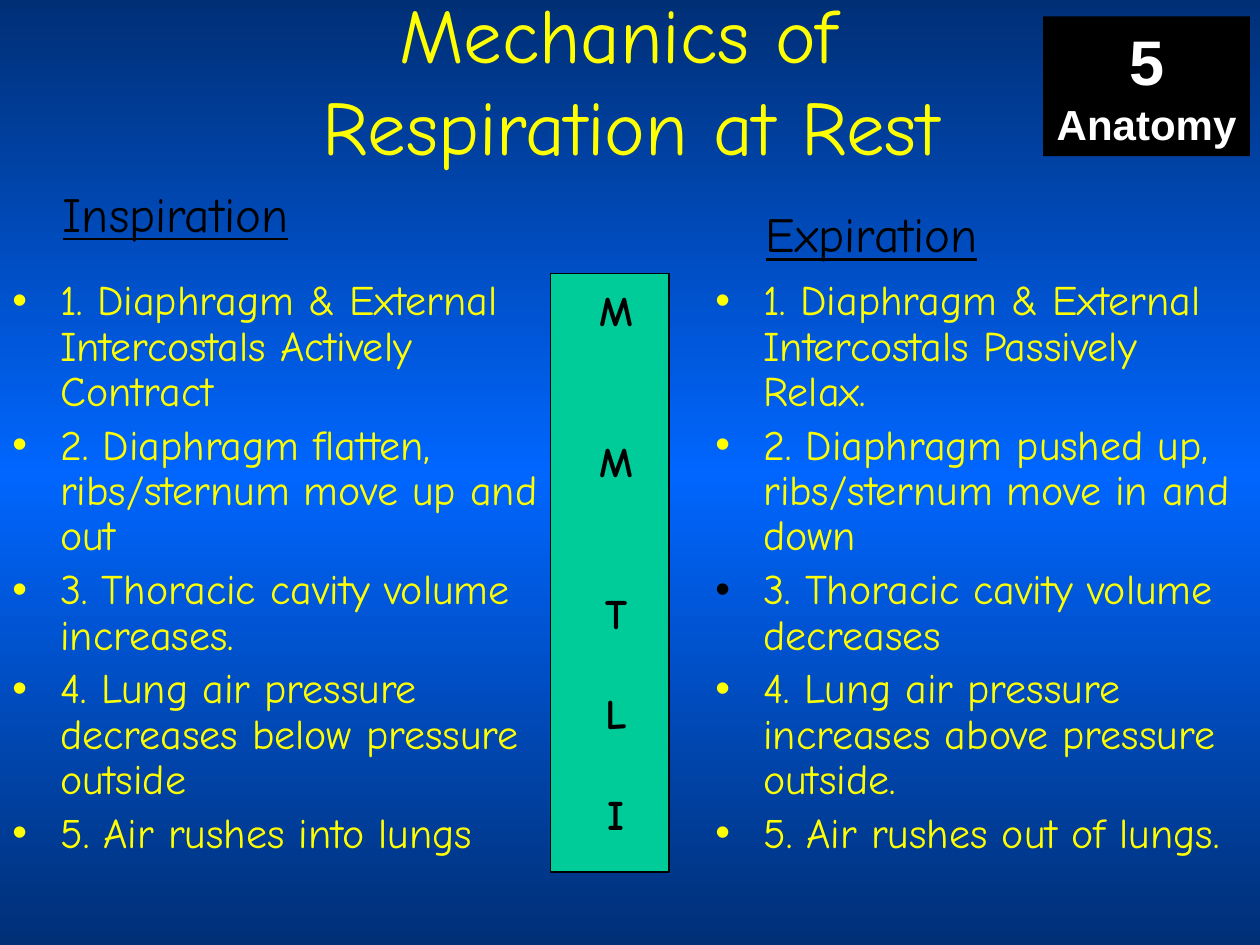
from copy import deepcopy

from lxml.etree import SubElement
from pptx import Presentation
from pptx.dml.color import RGBColor
from pptx.enum.shapes import MSO_SHAPE
from pptx.enum.text import MSO_ANCHOR, PP_ALIGN
from pptx.oxml.ns import qn
from pptx.util import Inches, Pt

WIDTH, HEIGHT = 10, 7.5
YELLOW, BLACK, WHITE, GREEN = "FFFF00", "000000", "FFFFFF", "00CC99"
NAVY, BLUE = "002F76", "0066FF"
HAND, SANS = "Comic Neue", "Arial"
LINE_HEIGHT = 1.2
BODY_SIZE = 24
INDENT = 0.38
BODY_TOP = 2.17

TITLE = "Mechanics of \vRespiration at Rest"
COLUMNS = [
    {
        "heading": "Inspiration", "heading_box": (0.4, 1.41, 2.02, 0.57), "left": 0,
        "steps": [
            ("1. Diaphragm & External Intercostals Actively Contract", YELLOW),
            ("2. Diaphragm flatten, ribs/sternum move up and out", YELLOW),
            ("3. Thoracic cavity volume increases.", YELLOW),
            ("4. Lung air pressure decreases below pressure outside", YELLOW),
            ("5. Air rushes into lungs", YELLOW),
        ],
    },
    {
        "heading": "Expiration", "heading_box": (5.98, 1.57, 1.95, 0.57), "left": 5.58,
        "steps": [
            ("1. Diaphragm & External Intercostals Passively Relax.", YELLOW),
            ("2. Diaphragm pushed up, ribs/sternum move in and down", YELLOW),
            ("3. Thoracic cavity volume decreases", BLACK),
            ("4. Lung air pressure increases above pressure outside.", YELLOW),
            ("5. Air rushes out of lungs.", YELLOW),
        ],
    },
]
# Each letter with the number of lines left free above it
MNEMONIC = [("M", 0), ("M", 2), ("T", 2), ("L", 1), ("I", 1)]
BADGE = [("5", 36), ("Anatomy", 24)]


def color(value):
    """Turn a hex string into a colour."""
    return RGBColor.from_string(value)


def paint_background(slide):
    """Fill the slide with a vertical navy, blue, navy gradient."""
    fill = slide.background.fill
    fill.gradient()
    fill.gradient_angle = 90
    stop_list = slide.element.find(".//" + qn("a:gsLst"))
    stop_list.append(deepcopy(stop_list[0]))
    for stop, position, value in zip(fill.gradient_stops, (0, 0.5, 1), (NAVY, BLUE, NAVY)):
        stop.position = position
        stop.color.rgb = color(value)


def add_text_box(slide, box, wrap=True):
    """Add a text box and return its text frame."""
    frame = slide.shapes.add_textbox(*map(Inches, box)).text_frame
    frame.word_wrap = wrap
    return frame


def add_rectangle(slide, box, fill, line=None):
    """Add a flat rectangle with an optional thin outline."""
    shape = slide.shapes.add_shape(MSO_SHAPE.RECTANGLE, *map(Inches, box))
    shape.shadow.inherit = False
    shape.fill.solid()
    shape.fill.fore_color.rgb = color(fill)
    if line:
        shape.line.color.rgb = color(line)
        shape.line.width = Pt(0.75)
    else:
        shape.line.fill.background()
    return shape


def write(frame, index, text, font_color, layout=None, **font):
    """Write one paragraph with its layout and font values."""
    paragraph = frame.paragraphs[0] if index == 0 else frame.add_paragraph()
    paragraph.text = text
    for name, value in (layout or {}).items():
        setattr(paragraph, name, value)
    # Font values also reach the line break inside a paragraph
    for part in (paragraph.font, *(run.font for run in paragraph.runs)):
        for name, value in font.items():
            setattr(part, name, value)
        part.color.rgb = color(font_color)
    return paragraph


def add_bullet(paragraph, value):
    """Give a paragraph a hanging round bullet."""
    properties = paragraph._p.get_or_add_pPr()
    properties.set("marL", str(Inches(INDENT)))
    properties.set("indent", str(-Inches(INDENT)))
    bullet_color = SubElement(properties, qn("a:buClr"))
    SubElement(bullet_color, qn("a:srgbClr"), val=value)
    SubElement(properties, qn("a:buFont"), typeface=SANS)
    SubElement(properties, qn("a:buChar"), char="\u2022")
    defaults = properties.find(qn("a:defRPr"))
    properties.append(defaults)


def add_column(slide, column):
    """Add an underlined heading and its bulleted steps."""
    heading = add_text_box(slide, column["heading_box"], wrap=False)
    write(heading, 0, column["heading"], BLACK, name=HAND, size=Pt(28), underline=True)
    frame = add_text_box(slide, (column["left"], BODY_TOP, 4.42, 4.5))
    layout = {"line_spacing": 0.9, "space_before": Pt(0.2 * BODY_SIZE)}
    for index, (step, bullet) in enumerate(column["steps"]):
        paragraph = write(frame, index, step, YELLOW, layout, name=HAND, size=Pt(BODY_SIZE))
        add_bullet(paragraph, bullet)


def add_mnemonic(slide):
    """Add the green bar with its column of letters."""
    add_rectangle(slide, (4.37, BODY_TOP, 0.94, 4.75), GREEN, BLACK)
    frame = add_text_box(slide, (4.65, 2.21, 0.48, 4.54), wrap=False)
    for index, (letter, free_lines) in enumerate(MNEMONIC):
        gap = Pt(free_lines * BODY_SIZE * LINE_HEIGHT)
        layout = {"alignment": PP_ALIGN.CENTER, "space_before": gap}
        write(frame, index, letter, BLACK, layout, name=HAND, size=Pt(BODY_SIZE), bold=True)


def add_badge(slide):
    """Add the black chapter badge in the top right corner."""
    frame = add_rectangle(slide, (8.28, 0.13, 1.64, 1.11), BLACK).text_frame
    frame.word_wrap = False
    frame.vertical_anchor = MSO_ANCHOR.TOP
    for index, (text, size) in enumerate(BADGE):
        write(frame, index, text, WHITE, {"alignment": PP_ALIGN.CENTER},
              name=SANS, size=Pt(size), bold=True)


def main():
    """Build and save the slide."""
    presentation = Presentation()
    presentation.slide_width, presentation.slide_height = Inches(WIDTH), Inches(HEIGHT)
    slide = presentation.slides.add_slide(presentation.slide_layouts[6])
    paint_background(slide)
    title = add_text_box(slide, (0.51, 0, 9, 1.25))
    title.vertical_anchor = MSO_ANCHOR.MIDDLE
    write(title, 0, TITLE, YELLOW, {"alignment": PP_ALIGN.CENTER}, name=HAND, size=Pt(44))
    for column in COLUMNS:
        add_column(slide, column)
    add_mnemonic(slide)
    add_badge(slide)
    presentation.save("out.pptx")


main()
